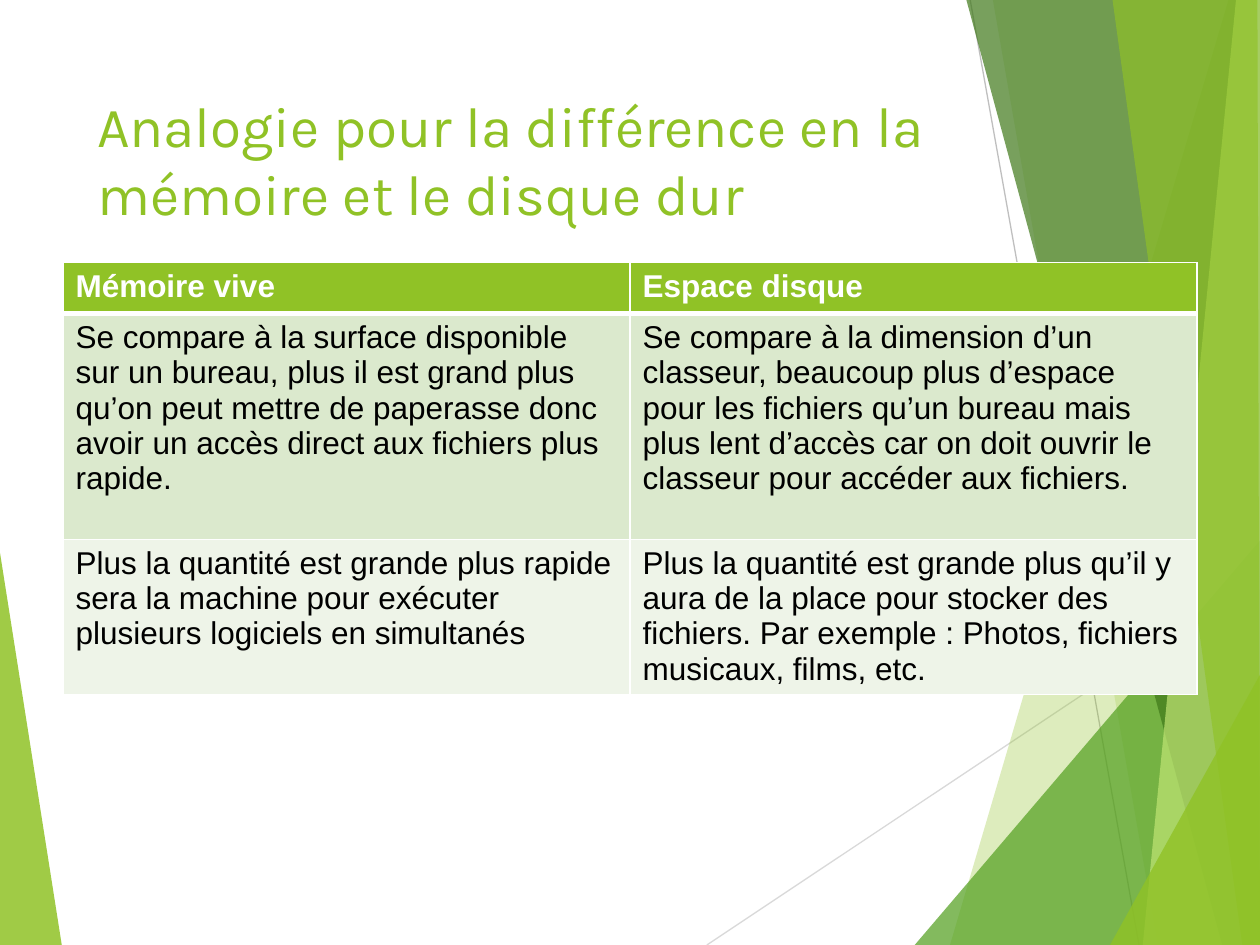
from dataclasses import dataclass

from lxml.etree import SubElement
from pptx import Presentation
from pptx.dml.color import RGBColor
from pptx.enum.shapes import MSO_CONNECTOR
from pptx.enum.text import MSO_ANCHOR, MSO_AUTO_SIZE, PP_ALIGN
from pptx.oxml.ns import qn
from pptx.util import Inches, Pt


@dataclass(frozen=True)
class Theme:
    lime: str = "90C226"
    leaf: str = "54A021"
    forest: str = "3F7819"
    pale_lime: str = "C0E474"
    light_grey: str = "D9D9D9"
    grey: str = "BFBFBF"
    white: str = "FFFFFF"
    black: str = "000000"
    bands: tuple = ("DBE9CD", "EEF4E8")
    title_font: str = "Karla"
    body_font: str = "Arial"
    title_size: float = 32.4
    body_size: float = 18


def write_text(frame, text, *, font, size, color, bold=False):
    """Put one formatted, left-aligned paragraph into a text frame."""
    para = frame.paragraphs[0]
    para.alignment = PP_ALIGN.LEFT
    span = para.add_run()
    span.text = text
    span.font.name = font
    span.font.size = Pt(size)
    span.font.bold = bold
    span.font.color.rgb = RGBColor.from_string(color)


class SlideBuilder:
    """Holds the theme and the page; positions are percentages of the page."""

    def __init__(self, deck, theme):
        self.deck = deck
        self.theme = theme
        self.page = deck.slides.add_slide(deck.slide_layouts[5])

    def x(self, percent):
        return round(self.deck.slide_width * percent / 100)

    def y(self, percent):
        return round(self.deck.slide_height * percent / 100)

    def facet(self, points, color, opacity):
        corners = [(self.x(across), self.y(down)) for across, down in points]
        builder = self.page.shapes.build_freeform(*corners[0])
        builder.add_line_segments(corners[1:], close=True)
        shape = builder.convert_to_shape()
        shape.shadow.inherit = False
        shape.line.fill.background()
        shape.fill.solid()
        shape.fill.fore_color.rgb = RGBColor.from_string(color)
        tint = shape.element.spPr.find(qn("a:solidFill"))[0]
        SubElement(tint, qn("a:alpha"), val=str(opacity * 1000))

    def line(self, start, end, color):
        connector = self.page.shapes.add_connector(
            MSO_CONNECTOR.STRAIGHT, self.x(start[0]), self.y(start[1]),
            self.x(end[0]), self.y(end[1]))
        connector.line.color.rgb = RGBColor.from_string(color)
        connector.line.width = Pt(0.75)
        SubElement(connector.element.spPr, qn("a:effectLst"))

    def title(self, text, left, top, width, height):
        box = self.page.shapes.title
        box.left, box.top = self.x(left), self.y(top)
        box.width, box.height = self.x(width), self.y(height)
        frame = box.text_frame
        frame.word_wrap = True
        frame.auto_size = MSO_AUTO_SIZE.NONE
        frame.vertical_anchor = MSO_ANCHOR.TOP
        write_text(frame, text, font=self.theme.title_font,
                   size=self.theme.title_size, color=self.theme.lime)
        # Bring the title in front of the facets
        box.element.getparent().append(box.element)

    def borders(self, cell, widths):
        properties = cell._tc.get_or_add_tcPr()
        for side, width in widths.items():
            edge = SubElement(properties, qn(f"a:ln{side}"), w=str(Pt(width)))
            fill = SubElement(edge, qn("a:solidFill"))
            SubElement(fill, qn("a:srgbClr"), val=self.theme.white)

    def table(self, rows, row_shares, left, top, width):
        theme = self.theme
        table = self.page.shapes.add_table(
            len(rows), len(rows[0]), self.x(left), self.y(top),
            self.x(width), self.y(sum(row_shares))).table
        table.horz_banding = False
        for index, (texts, share) in enumerate(zip(rows, row_shares)):
            table.rows[index].height = self.y(share)
            header = index == 0
            fill = theme.lime if header else theme.bands[index - 1]
            widths = {"L": 1, "R": 1, "T": 3 if index == 1 else 1,
                      "B": 3 if header else 1}
            for column, text in enumerate(texts):
                cell = table.cell(index, column)
                self.borders(cell, widths)
                cell.fill.solid()
                cell.fill.fore_color.rgb = RGBColor.from_string(fill)
                write_text(cell.text_frame, text, font=theme.body_font,
                           size=theme.body_size, bold=header,
                           color=theme.white if header else theme.black)


ROWS = [
    ("Mémoire vive", "Espace disque"),
    ("Se compare à la surface disponible sur un bureau, plus il est grand "
     "plus qu’on peut mettre de paperasse donc avoir un accès direct aux "
     "fichiers plus rapide.",
     "Se compare à la dimension d’un classeur, beaucoup plus d’espace pour "
     "les fichiers qu’un bureau mais plus lent d’accès car on doit ouvrir le "
     "classeur pour accéder aux fichiers."),
    ("Plus la quantité est grande plus rapide sera la machine pour exécuter "
     "plusieurs logiciels en simultanés",
     "Plus la quantité est grande plus qu’il y aura de la place pour stocker "
     "des fichiers. Par exemple : Photos, fichiers musicaux, films, etc."),
]


def right_band(top_left, bottom_left, top_right=100):
    """Corners of a band running from top to bottom along the right edge."""
    return [(top_left, 0), (bottom_left, 100), (100, 100), (top_right, 0)]


def right_wedge(left, top):
    """Corners of a triangle in the bottom right corner."""
    return [(left, 100), (100, top), (100, 100)]


def main():
    theme = Theme()
    deck = Presentation()
    deck.slide_width, deck.slide_height = Inches(10), Inches(7.5)
    slide = SlideBuilder(deck, theme)

    # Background facets and thin lines
    slide.facet([(0, 58.5), (4.9, 100), (0, 100)], theme.lime, 85)
    slide.line((56.1, 100), (100, 61), theme.light_grey)
    slide.line((77, 0), (90.4, 100), theme.grey)
    for points, color, opacity in [
        (right_band(97.5, 75.4), theme.lime, 30),
        (right_band(78.8, 91.9), theme.lime, 20),
        (right_wedge(72.6, 57.2), theme.leaf, 72),
        (right_band(76.7, 97), theme.forest, 70),
        (right_band(98.1, 90.7), theme.pale_lime, 70),
        (right_band(88.3, 98.6, 99.8), theme.lime, 65),
        (right_wedge(88.1, 71.4), theme.lime, 80),
    ]:
        slide.facet(points, color, opacity)

    # Title and comparison table
    slide.title("Analogie pour la différence en la mémoire et le disque dur",
                left=6.7, top=8.9, width=69.4, height=19.2)
    slide.table(ROWS, (5.4, 23.9, 16.4), left=5, top=27.8, width=90)

    deck.save("out.pptx")


if __name__ == "__main__":
    main()
